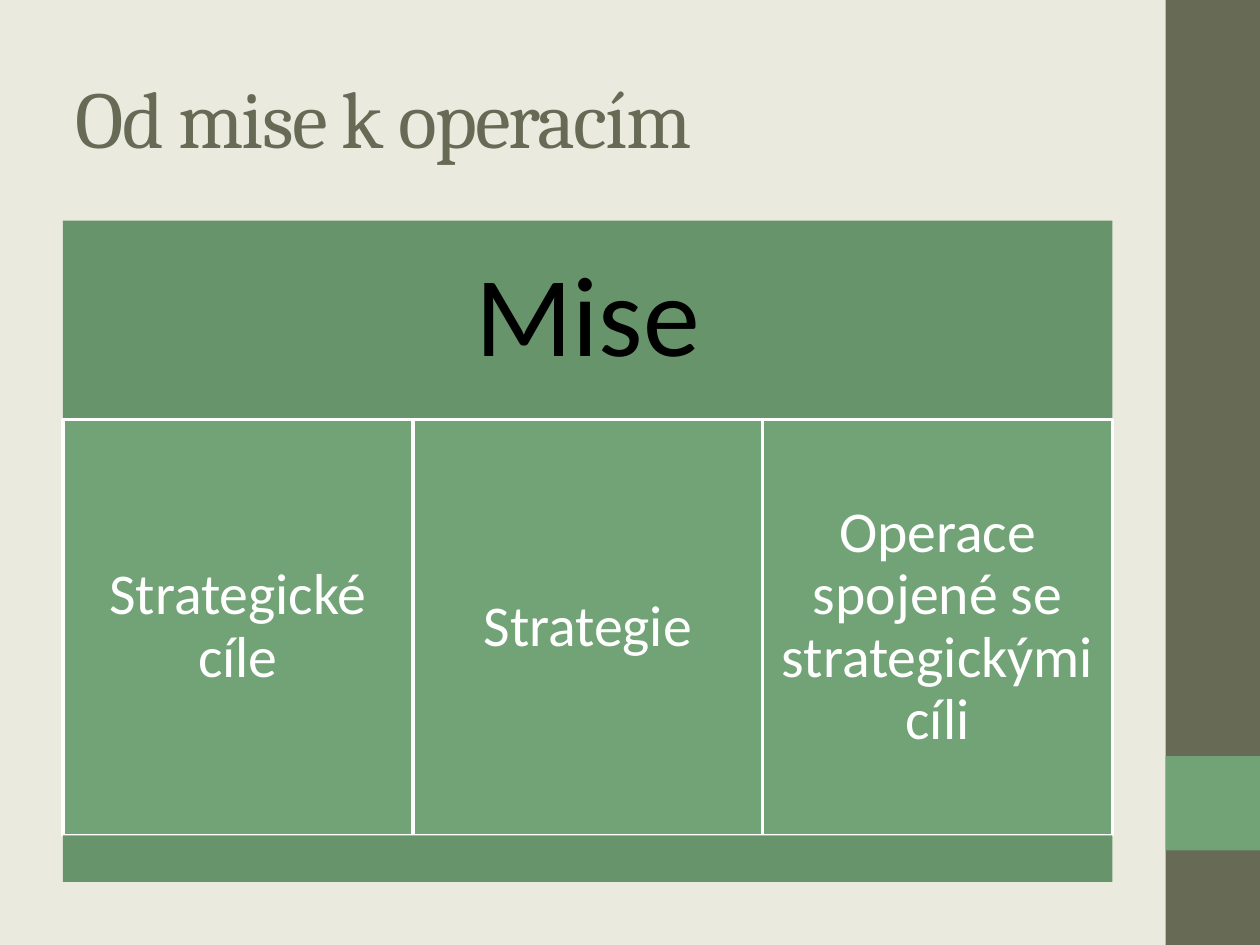
from pptx import Presentation, util as u
from pptx.dml.color import RGBColor
from pptx.enum import shapes, text

BACKGROUND = RGBColor(0xEA, 0xEB, 0xDE)
OLIVE = RGBColor(0x67, 0x6A, 0x55)
GREEN = RGBColor(0x72, 0xA3, 0x76)
DARK_GREEN = RGBColor(0x67, 0x94, 0x6B)
WHITE = RGBColor(0xFF, 0xFF, 0xFF)
BLACK = RGBColor(0, 0, 0)

WIDTH, HEIGHT = 10, 7.5
SIDEBAR = 0.75
LEFT, CONTENT_WIDTH = 0.5, 8.33
# Edges of the three rows: mission, pillars, base
ROW_EDGES = [1.75, 3.33, 6.63, 7]
PILLARS = ["Strategické cíle", "Strategie", "Operace spojené se strategickými cíli"]


def place(shape, left, top, width, height):
    shape.left, shape.top = u.Inches(left), u.Inches(top)
    shape.width, shape.height = u.Inches(width), u.Inches(height)


def add_block(slide, left, top, width, height, fill, outlined=False):
    shape = slide.shapes.add_shape(
        shapes.MSO_SHAPE.RECTANGLE, *map(u.Inches, (left, top, width, height)))
    shape.shadow.inherit = False
    shape.fill.solid()
    shape.fill.fore_color.rgb = fill
    if outlined:
        shape.line.color.rgb = WHITE
        shape.line.width = u.Pt(2)
    else:
        shape.line.fill.background()
    return shape


def format_font(run, name, size, color):
    run.font.name = name
    run.font.size = u.Pt(size)
    run.font.color.rgb = color


def write_label(shape, label, size, color, inset):
    frame = shape.text_frame
    frame.text = label
    frame.word_wrap = True
    frame.vertical_anchor = text.MSO_ANCHOR.MIDDLE
    frame.margin_left = frame.margin_right = u.Inches(inset)
    frame.margin_top = frame.margin_bottom = u.Inches(inset)
    paragraph = frame.paragraphs[0]
    paragraph.alignment = text.PP_ALIGN.CENTER
    paragraph.line_spacing = 0.9
    format_font(paragraph.runs[0], "Calibri", size, color)


def add_title(slide, wording):
    title = slide.shapes.title
    place(title, LEFT, 0.3, CONTENT_WIDTH, 1.25)
    frame = title.text_frame
    frame.text = wording
    frame.word_wrap = True
    frame.vertical_anchor = text.MSO_ANCHOR.MIDDLE
    paragraph = frame.paragraphs[0]
    paragraph.alignment = text.PP_ALIGN.LEFT
    run = paragraph.runs[0]
    format_font(run, "Cambria", 46, OLIVE)
    run.font._element.set("spc", "-100")  # letters one point closer


def add_sidebar(slide):
    left = WIDTH - SIDEBAR
    add_block(slide, left, 0, SIDEBAR, HEIGHT, OLIVE)
    add_block(slide, left, 0.8 * HEIGHT, SIDEBAR, SIDEBAR, GREEN)


def add_mission_diagram(slide):
    top, pillar_top, base_top, bottom = ROW_EDGES
    # Mission across the full width
    mission = add_block(slide, LEFT, top, CONTENT_WIDTH, pillar_top - top, DARK_GREEN)
    write_label(mission, "Mise", 65, BLACK, 0.27)
    # Equal pillars below it
    column = CONTENT_WIDTH / len(PILLARS)
    for index, label in enumerate(PILLARS):
        pillar = add_block(slide, LEFT + index * column, pillar_top, column,
                           base_top - pillar_top, GREEN, outlined=True)
        write_label(pillar, label, 33, WHITE, 0.14)
    # Base strip
    add_block(slide, LEFT, base_top, CONTENT_WIDTH, bottom - base_top, DARK_GREEN)


def main():
    presentation = Presentation()
    presentation.slide_width = u.Inches(WIDTH)
    presentation.slide_height = u.Inches(HEIGHT)
    slide = presentation.slides.add_slide(presentation.slide_layouts[5])
    slide.background.fill.solid()
    slide.background.fill.fore_color.rgb = BACKGROUND
    add_sidebar(slide)
    add_title(slide, "Od mise k operacím")
    add_mission_diagram(slide)
    presentation.save("out.pptx")


if __name__ == "__main__":
    main()
